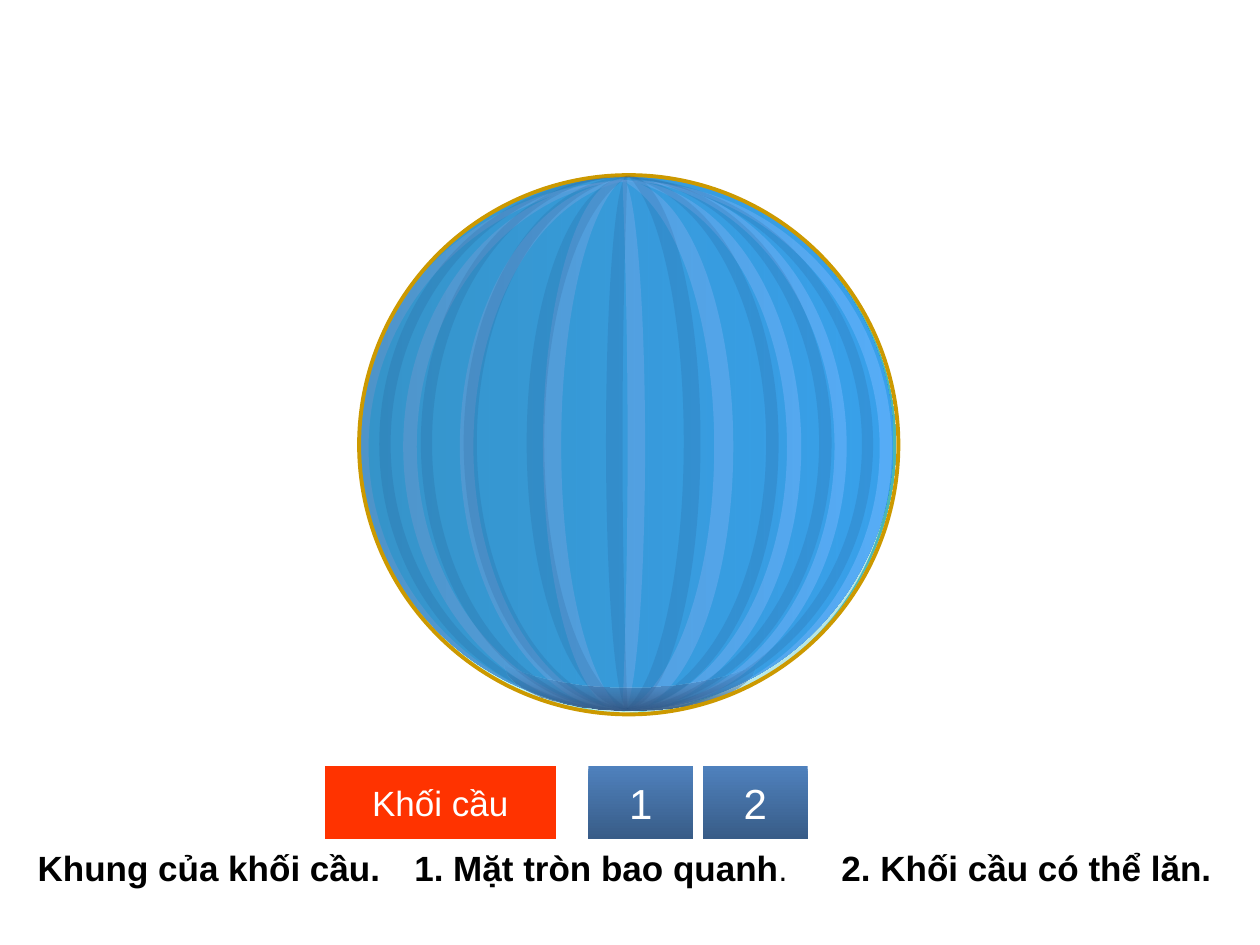
from lxml import etree
from pptx import Presentation
from pptx.dml.color import RGBColor
from pptx.enum.shapes import MSO_SHAPE
from pptx.enum.text import MSO_ANCHOR, MSO_AUTO_SIZE, PP_ALIGN
from pptx.oxml.ns import qn
from pptx.util import Inches, Pt

ELLIPSE, MOON, BUTTON = MSO_SHAPE.OVAL, MSO_SHAPE.MOON, MSO_SHAPE.ACTION_BUTTON_CUSTOM
CENTER, MIDDLE, GROW = PP_ALIGN.CENTER, MSO_ANCHOR.MIDDLE, MSO_AUTO_SIZE.SHAPE_TO_FIT_TEXT

THEME = {
    "font": "Arial",
    "text": "000000", "button text": "FFFFFF", "red": "FF3300",
    "aqua": "66FFFF", "glass": "3399FF", "steel": "4F81BD",
    "light": "FFFFFF", "dark": "1F497D", "rim": "CC9900",
    "shade": 46.27, "rim width": 2.25,
    "label": 20, "number": 24, "full stop": 18,
}

RIB_HEIGHT = 4.23
# left, top, width, thickness, bulges to the right
LIGHT_RIBS = [
    (5, 1.44, 2.08, 0.047, True), (2.83, 1.44, 2.17, 0.044, False),
    (5, 1.43, 1.72, 0.056, True), (3.2, 1.43, 1.79, 0.06, False),
    (4.93, 1.43, 1.43, 0.079, True), (3.65, 1.43, 1.36, 0.079, False),
    (4.93, 1.43, 0.89, 0.17, True), (4.31, 1.42, 0.63, 0.229, False),
    (4.94, 1.42, 0.18, 0.771, True),
]
DARK_RIBS = [
    (3.01, 1.41, 1.92, 0.047, False), (4.93, 1.41, 2, 0.044, True),
    (3.34, 1.4, 1.58, 0.056, False), (4.95, 1.4, 1.65, 0.06, True),
    (3.68, 1.4, 1.32, 0.079, False), (4.93, 1.4, 1.25, 0.079, True),
    (4.18, 1.4, 0.82, 0.17, False), (4.98, 1.39, 0.58, 0.229, True),
    (4.81, 1.39, 0.17, 0.771, False),
]

BUTTON_TOP, BUTTON_HEIGHT = 6.08, 0.58
NUMBER_BUTTONS = [("1", 4.67, 0.83), ("2", 5.58, 0.83)]
NAME_BUTTON = ("Khối cầu", 2.58, 1.83)

CAPTION_TOP, CAPTION_HEIGHT = 6.67, 0.43
# bold text, plain ending, left, width
CAPTIONS = [
    ("Khung của khối cầu.", "", 0.2, 2.98),
    ("1. Mặt tròn bao quanh", ".", 3.19, 3.34),
    ("2. Khối cầu có thể lăn.", "", 6.58, 3.42),
]


def rgb(name):
    return RGBColor.from_string(THEME[name])


def add_part(shapes, kind, left, top, width, height, color=None):
    shape = shapes.add_shape(kind, *map(Inches, (left, top, width, height)))
    shape.shadow.inherit = False
    shape.line.fill.background()
    if color:
        shape.fill.solid()
        shape.fill.fore_color.rgb = rgb(color)
    else:
        shape.fill.background()
    return shape


def add_modifier(color, tag, percent):
    etree.SubElement(color, qn(f"a:{tag}")).set("val", str(round(percent * 1000)))


def set_gradient(shape, name, angle, shaded_first, opacities=(100, 100)):
    """Run between a colour and its darker shade, at the given angle."""
    gradient = etree.Element(qn("a:gradFill"), rotWithShape="1")
    stops = etree.SubElement(gradient, qn("a:gsLst"))
    for index, opacity in enumerate(opacities):
        stop = etree.SubElement(stops, qn("a:gs"), pos=str(index * 100000))
        color = etree.SubElement(stop, qn("a:srgbClr"), val=THEME[name])
        if (index == 0) == shaded_first:
            add_modifier(color, "shade", THEME["shade"])
        if opacity < 100:
            add_modifier(color, "alpha", opacity)
    etree.SubElement(gradient, qn("a:lin"), ang=str(angle * 60000), scaled="1")
    properties = shape._element.spPr
    properties.replace(properties.find(qn("a:noFill")), gradient)


def add_ribs(page, ribs, color, opacity):
    group = page.shapes.add_group_shape()
    for left, top, width, thickness, mirrored in ribs:
        rib = add_part(group.shapes, MOON, left, top, width, RIB_HEIGHT, color)
        rib.adjustments[0] = thickness
        properties = rib._element.spPr
        add_modifier(properties.find(f"{qn('a:solidFill')}/{qn('a:srgbClr')}"), "alpha", opacity)
        if mirrored:
            properties.find(qn("a:xfrm")).set("flipH", "1")


def style(span, size, color, bold=False):
    span.font.name = THEME["font"]
    span.font.size = Pt(THEME[size])
    span.font.bold = bold
    span.font.color.rgb = rgb(color)


def add_button(page, label, left, width, size, color=None):
    button = add_part(page.shapes, BUTTON, left, BUTTON_TOP, width, BUTTON_HEIGHT, color)
    if not color:
        set_gradient(button, "steel", 90, shaded_first=False)
    frame = button.text_frame
    frame.text = label
    frame.word_wrap = False
    frame.vertical_anchor = MIDDLE
    para = frame.paragraphs[0]
    para.alignment = CENTER
    style(para.runs[0], size, "button text")


def add_caption(page, text, ending, left, width):
    box = page.shapes.add_textbox(*map(Inches, (left, CAPTION_TOP, width, CAPTION_HEIGHT)))
    frame = box.text_frame
    frame.word_wrap = True
    frame.auto_size = GROW
    para = frame.paragraphs[0]
    para.text = text
    style(para.runs[0], "label", "text", bold=True)
    if ending:
        span = para.add_run()
        span.text = ending
        style(span, "full stop", "text")


def add_sphere(page):
    shapes = page.shapes
    core = add_part(shapes, ELLIPSE, 2.85, 1.4, 4.26, 4.26)
    set_gradient(core, "aqua", 0, shaded_first=False)
    add_ribs(page, LIGHT_RIBS, "light", 60)
    glass = add_part(shapes, ELLIPSE, 2.85, 1.39, 4.24, 4.24)
    set_gradient(glass, "glass", 0, shaded_first=True, opacities=(73, 73))
    base = add_part(shapes, MOON, 4.82, 4.46, 0.36, 1.99)
    base.adjustments[0] = 0.5
    base.rotation = 270
    set_gradient(base, "steel", 0, shaded_first=True, opacities=(100, 0))
    rim = add_part(shapes, ELLIPSE, 2.85, 1.39, 4.28, 4.28)
    rim.line.color.rgb = rgb("rim")
    rim.line.width = Pt(THEME["rim width"])


def main():
    deck = Presentation()
    deck.slide_width, deck.slide_height = Inches(10), Inches(7.5)
    page = deck.slides.add_slide(deck.slide_layouts[6])
    add_sphere(page)
    for button in NUMBER_BUTTONS:
        add_button(page, *button, "number")
    add_ribs(page, DARK_RIBS, "dark", 15)
    add_button(page, *NAME_BUTTON, "label", "red")
    for caption in CAPTIONS:
        add_caption(page, *caption)
    deck.save("out.pptx")


if __name__ == "__main__":
    main()
